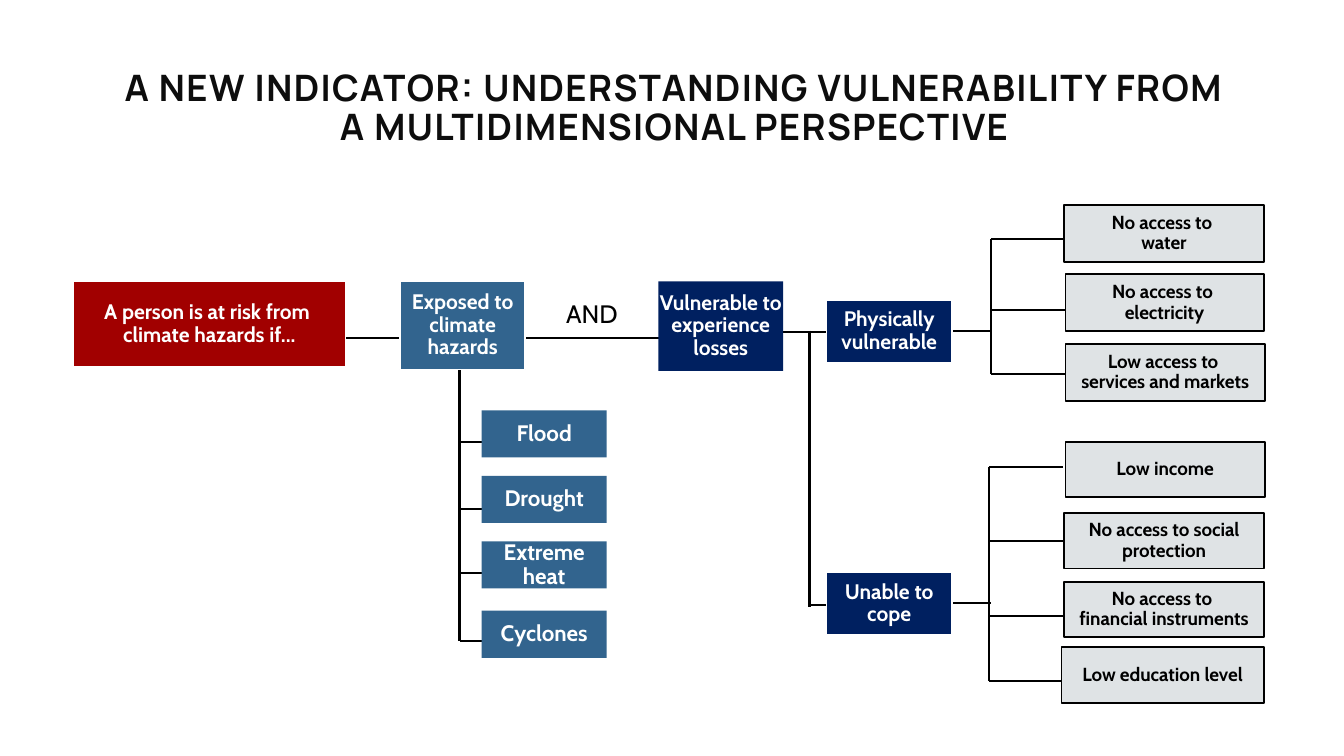
from dataclasses import dataclass
from typing import Optional

from lxml.etree import SubElement
from pptx import Presentation
from pptx.dml.color import RGBColor
from pptx.enum.shapes import MSO_CONNECTOR, MSO_SHAPE
from pptx.enum.text import MSO_ANCHOR, MSO_AUTO_SIZE, PP_ALIGN
from pptx.oxml.ns import qn
from pptx.slide import Slide
from pptx.util import Cm, Pt

RED = RGBColor(0xA1, 0x00, 0x00)
BLUE = RGBColor(0x32, 0x64, 0x8E)
NAVY = RGBColor(0x00, 0x20, 0x60)
GREY = RGBColor(0xDF, 0xE3, 0xE5)
WHITE = RGBColor(0xFF, 0xFF, 0xFF)
BLACK = RGBColor(0x00, 0x00, 0x00)
TITLE_COLOR = RGBColor(0x0D, 0x0D, 0x0D)
TITLE = "A NEW INDICATOR: UNDERSTANDING VULNERABILITY FROM A MULTIDIMENSIONAL PERSPECTIVE"


@dataclass(frozen=True)
class BoxStyle:
    fill: RGBColor
    text: RGBColor
    size: float
    outline: Optional[RGBColor] = None


@dataclass(frozen=True)
class Box:
    text: str
    left: float
    top: float
    width: float
    height: float
    style: BoxStyle


@dataclass(frozen=True)
class Line:
    x1: float
    y1: float
    x2: float
    y2: float


@dataclass(frozen=True)
class Bracket:
    trunk_x: float
    top: float
    bottom: float
    branch_end: float
    branches: tuple[float, ...]


PERSON = BoxStyle(RED, WHITE, 15, WHITE)
EXPOSURE = BoxStyle(BLUE, WHITE, 15, WHITE)
HAZARD = BoxStyle(BLUE, WHITE, 16)
VULNERABLE = BoxStyle(NAVY, WHITE, 15)
DIMENSION = BoxStyle(NAVY, WHITE, 15, WHITE)
INDICATOR = BoxStyle(GREY, BLACK, 13.5, BLACK)

HAZARDS = {"Flood": 10.34, "Drought": 11.99, "Extreme heat": 13.64, "Cyclones": 15.39}

BOXES = [
    Box("Vulnerable to experience losses", 16.59, 7.09, 3.15, 2.26, VULNERABLE),
    Box("A person is at risk from \vclimate hazards if...", 1.85, 7.09, 6.86, 2.16, PERSON),
    *(Box(name, 12.14, top, 3.15, 1.19, HAZARD) for name, top in HAZARDS.items()),
    Box("Exposed to climate hazards", 10.08, 7.09, 3.16, 2.22, EXPOSURE),
    Box("No access to \vwater", 26.82, 5.16, 5.03, 1.44, INDICATOR),
    Box("No access to \velectricity", 26.85, 6.91, 5, 1.44, INDICATOR),
    Box("Low access to \vservices and markets", 26.85, 8.66, 5.03, 1.44, INDICATOR),
    Box("Physically vulnerable", 20.83, 7.57, 3.16, 1.57, DIMENSION),
    Box("Low income", 26.85, 11.13, 5.03, 1.4, INDICATOR),
    Box("No access to social protection", 26.82, 12.93, 5.03, 1.4, INDICATOR),
    Box("No access to \vfinancial instruments", 26.82, 14.66, 5.03, 1.4, INDICATOR),
    Box("Low education level", 26.75, 16.31, 5.1, 1.4, INDICATOR),
    Box("Unable to cope", 20.83, 14.43, 3.16, 1.57, DIMENSION),
]

LINKS = [
    Line(12.67, 8.51, 17.04, 8.51),
    Line(8.71, 8.51, 13.08, 8.51),
    Line(19.63, 8.36, 21.16, 8.36),
    Line(24, 8.33, 24.97, 8.33),
    Line(24, 15.19, 24.97, 15.19),
]

BRACKETS = [
    Bracket(11.58, 8.53, 16.15, 12.14, (11.13, 12.83, 14.43, 16.15)),
    Bracket(20.4, 8.33, 15.29, 20.95, (15.24,)),
    Bracket(24.97, 6.02, 9.42, 26.86, (6.02, 7.82, 9.42)),
    Bracket(24.92, 11.76, 17.15, 26.8, (11.76, 13.64, 15.52, 17.15)),
]


def add_title(slide: Slide) -> None:
    """Place and format the title placeholder."""
    title = slide.shapes.title
    title.left, title.top, title.width, title.height = Cm(2.79), Cm(1.63), Cm(28.42), Cm(4.17)
    frame = title.text_frame
    frame.text = TITLE
    frame.word_wrap = True
    frame.auto_size = MSO_AUTO_SIZE.NONE
    frame.vertical_anchor = MSO_ANCHOR.TOP
    paragraph = frame.paragraphs[0]
    paragraph.alignment = PP_ALIGN.CENTER
    paragraph.line_spacing = 0.9
    font = paragraph.font
    font.name, font.size, font.bold = "Manrope", Pt(26), True
    font.color.rgb = TITLE_COLOR
    paragraph.runs[0].font._element.set("spc", "100")


def add_line(slide: Slide, line: Line) -> None:
    """Draw one black connecting line."""
    connector = slide.shapes.add_connector(
        MSO_CONNECTOR.STRAIGHT, Cm(line.x1), Cm(line.y1), Cm(line.x2), Cm(line.y2)
    )
    connector.line.color.rgb = BLACK
    connector.line.width = Pt(1.5)
    SubElement(connector._element.spPr, qn("a:effectLst"))


def add_bracket(slide: Slide, bracket: Bracket) -> None:
    """Draw a vertical trunk and its horizontal branches."""
    add_line(slide, Line(bracket.trunk_x, bracket.top, bracket.trunk_x, bracket.bottom))
    for y in bracket.branches:
        add_line(slide, Line(bracket.trunk_x, y, bracket.branch_end, y))


def add_box(slide: Slide, box: Box) -> None:
    """Draw a filled rectangle with centred bold text."""
    shape = slide.shapes.add_shape(
        MSO_SHAPE.RECTANGLE, Cm(box.left), Cm(box.top), Cm(box.width), Cm(box.height)
    )
    shape.shadow.inherit = False
    shape.fill.solid()
    shape.fill.fore_color.rgb = box.style.fill
    if box.style.outline is None:
        shape.line.fill.background()
    else:
        shape.line.color.rgb = box.style.outline
        shape.line.width = Pt(1.25)
    frame = shape.text_frame
    frame.word_wrap = True
    frame.vertical_anchor = MSO_ANCHOR.MIDDLE
    frame.margin_left = frame.margin_right = frame.margin_top = frame.margin_bottom = Cm(0.03)
    frame.text = box.text
    paragraph = frame.paragraphs[0]
    paragraph.alignment = PP_ALIGN.CENTER
    paragraph.line_spacing = 0.9
    font = paragraph.font
    font.name, font.size, font.bold = "Cabin", Pt(box.style.size), True
    font.color.rgb = box.style.text


def add_and_label(slide: Slide) -> None:
    """Write the word that joins exposure and vulnerability."""
    label = slide.shapes.add_textbox(Cm(14.02), Cm(7.39), Cm(2.13), Cm(1.02))
    label.fill.solid()
    label.fill.fore_color.rgb = WHITE
    label.text_frame.word_wrap = True
    label.text_frame.text = "AND"
    font = label.text_frame.paragraphs[0].font
    font.name, font.size = "Cabin", Pt(18)
    font.color.rgb = BLACK


def main() -> None:
    """Build the slide and save it."""
    presentation = Presentation()
    presentation.slide_width, presentation.slide_height = Cm(33.87), Cm(19.05)
    slide = presentation.slides.add_slide(presentation.slide_layouts.get_by_name("Title Only"))
    add_title(slide)
    for link in LINKS:
        add_line(slide, link)
    for bracket in BRACKETS:
        add_bracket(slide, bracket)
    add_and_label(slide)
    for box in BOXES:
        add_box(slide, box)
    presentation.save("out.pptx")


if __name__ == "__main__":
    main()
